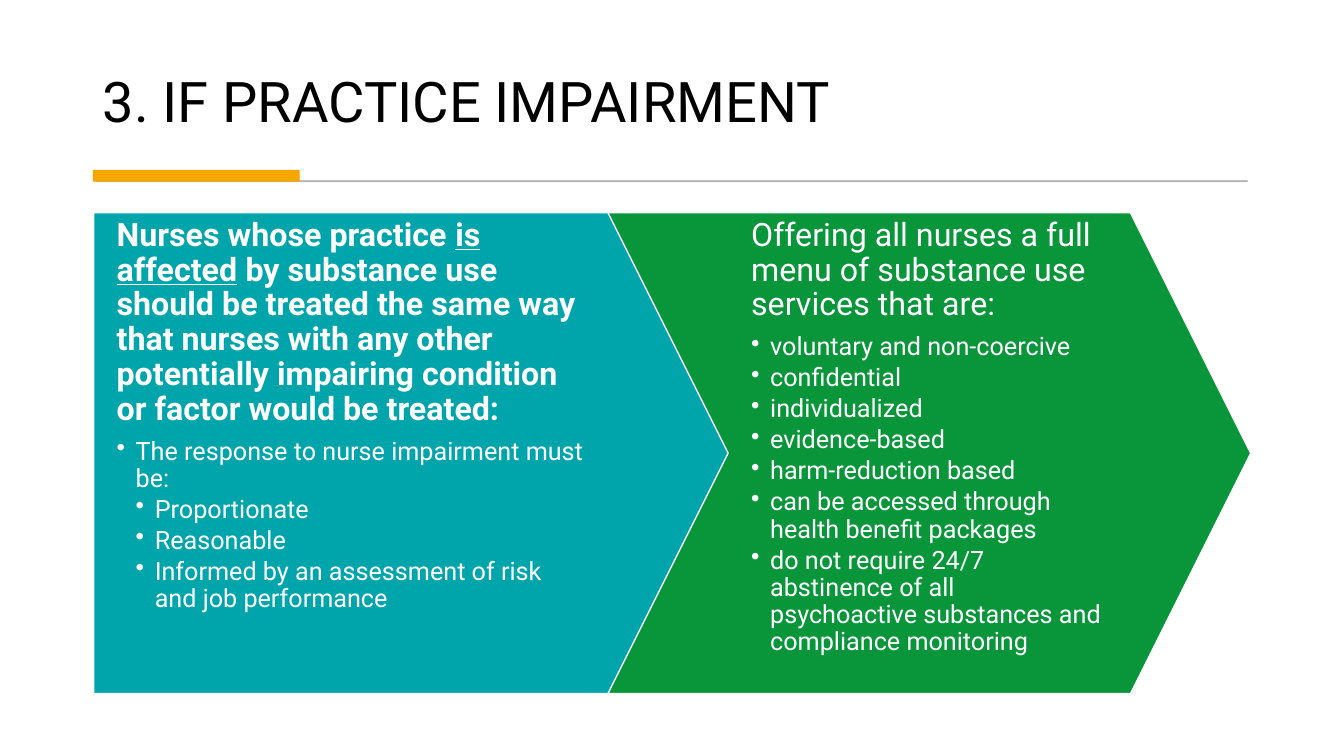
from dataclasses import dataclass

from lxml.etree import SubElement
from pptx import Presentation
from pptx.dml.color import RGBColor
from pptx.enum.shapes import MSO_SHAPE
from pptx.enum.text import MSO_ANCHOR, MSO_AUTO_SIZE, PP_ALIGN
from pptx.oxml.ns import qn
from pptx.util import Cm, Pt


@dataclass(frozen=True)
class Theme:
    """Colours, typeface and type sizes of the slide."""
    font: str = "Roboto"
    title_size: float = 40
    lead_size: float = 23
    bullet_size: float = 18
    black: str = "000000"
    white: str = "FFFFFF"
    rule: str = "595959"
    accent: str = "F5A700"
    teal: str = "00A5AB"
    green: str = "09963B"


@dataclass(frozen=True)
class Box:
    """A rectangle in centimetres."""
    left: float
    top: float
    width: float
    height: float

    def lengths(self):
        """Return left, top, width and height as lengths."""
        return [Cm(side) for side in (self.left, self.top, self.width, self.height)]


THEME = Theme()
INDENT = 0.48
ARROW_POINT = 0.25


def add_text(paragraph, text, size, color=THEME.white, bold=False, underline=False):
    """Append one formatted run to a paragraph."""
    run = paragraph.add_run()
    run.text = text
    run.font.name = THEME.font
    run.font.size = Pt(size)
    run.font.bold = bold
    run.font.underline = underline
    run.font.color.rgb = RGBColor.from_string(color)


def add_filled(slide, preset, box, fill, outline=None, weight=1):
    """Draw a preset shape with a flat fill and an optional outline."""
    filled = slide.shapes.add_shape(preset, *box.lengths())
    filled.shadow.inherit = False
    filled.fill.solid()
    filled.fill.fore_color.rgb = RGBColor.from_string(fill)
    if outline:
        filled.line.color.rgb = RGBColor.from_string(outline)
        filled.line.width = Pt(weight)
    else:
        filled.line.fill.background()
    return filled


def set_margins(frame, left, right, vertical):
    """Set the inner margins of a text frame that wraps at a fixed size."""
    frame.word_wrap = True
    frame.auto_size = MSO_AUTO_SIZE.NONE
    frame.margin_left, frame.margin_right = Cm(left), Cm(right)
    frame.margin_top = frame.margin_bottom = Cm(vertical)


def add_header(slide, box):
    """Place the title above its grey rule and accent bar."""
    title = slide.shapes.title
    title.left, title.top, title.width, title.height = Box(
        box.left, box.top, box.width, 2.82).lengths()
    frame = title.text_frame
    set_margins(frame, 0.25, 0.25, 0.13)
    frame.vertical_anchor = MSO_ANCHOR.BOTTOM
    heading = frame.paragraphs[0]
    heading.alignment = PP_ALIGN.LEFT
    heading.line_spacing = 0.9
    add_text(heading, "3. IF PRACTICE IMPAIRMENT", THEME.title_size, color=THEME.black)

    bottom = box.top + box.height
    rule = add_filled(slide, MSO_SHAPE.RECTANGLE,
                      Box(box.left + 0.07, bottom - 0.03, 29.03, 0.03),
                      THEME.rule, outline=THEME.rule, weight=0.75)
    for color in rule.element.spPr.iter(qn("a:srgbClr")):
        SubElement(color, qn("a:alpha"), val="30000")
    add_filled(slide, MSO_SHAPE.RECTANGLE,
               Box(box.left, bottom - 0.3, 5.21, 0.3), THEME.accent)


def add_bullet(frame, text, level):
    """Append a bulleted paragraph at the given level."""
    bullet = frame.add_paragraph()
    properties = bullet._p.get_or_add_pPr()
    properties.set("marL", str(Cm(INDENT * level)))
    properties.set("indent", str(-Cm(INDENT)))
    SubElement(properties, qn("a:buChar"), char="•")
    bullet.level = level
    bullet.line_spacing = 0.9
    bullet.space_after = Pt(2.7)
    add_text(bullet, text, THEME.bullet_size)


def add_arrow(slide, box, preset, fill, text_box, right_margin, lead, bullets):
    """Draw an arrow with its lead sentence and bullets."""
    arrow = add_filled(slide, preset, box, fill, outline=THEME.white)
    arrow.adjustments[0] = ARROW_POINT
    frame = slide.shapes.add_textbox(*text_box.lengths()).text_frame
    set_margins(frame, 0.58, right_margin, 0.15)
    opening = frame.paragraphs[0]
    opening.line_spacing = 0.9
    opening.space_after = Pt(8)
    for text, style in lead:
        add_text(opening, text, THEME.lead_size, **style)
    for text, level in bullets:
        add_bullet(frame, text, level)


def add_process(slide, box):
    """Place the two overlapping arrows across the box."""
    width = box.width / 1.8
    point = ARROW_POINT * box.height
    principle = Box(box.left, box.top, width, box.height)
    services = Box(box.left + 0.8 * width, box.top, width, box.height)

    add_arrow(
        slide, principle, MSO_SHAPE.PENTAGON, THEME.teal,
        Box(principle.left, box.top, width - point / 2, box.height), 2.29,
        [("Nurses whose practice ", {"bold": True}),
         ("is affected", {"bold": True, "underline": True}),
         (" by substance use should be treated the same way that nurses with any "
          "other potentially impairing condition or factor would be treated:",
          {"bold": True})],
        [("The response to nurse impairment must be:", 1),
         ("Proportionate", 2),
         ("Reasonable", 2),
         ("Informed by an assessment of risk and job performance", 2)])

    qualities = [
        "voluntary and non-coercive",
        "confidential",
        "individualized",
        "evidence-based",
        "harm-reduction based",
        "can be accessed through health benefit packages",
        "do not require 24/7 abstinence of all psychoactive substances "
        "and compliance monitoring",
    ]
    add_arrow(
        slide, services, MSO_SHAPE.CHEVRON, THEME.green,
        Box(services.left + point, box.top, width - 2 * point, box.height), 0.58,
        [("Offering all nurses a full menu of substance use services that are:", {})],
        [(quality, 1) for quality in qualities])


def main():
    """Build the slide and save it."""
    presentation = Presentation()
    presentation.slide_width = Cm(33.87)
    presentation.slide_height = Cm(19.05)
    slide = presentation.slides.add_slide(presentation.slide_layouts[5])
    add_header(slide, Box(2.34, 0.71, 29.18, 3.87))
    add_process(slide, Box(2.36, 5.36, 29.16, 12.12))
    presentation.save("out.pptx")


if __name__ == "__main__":
    main()
